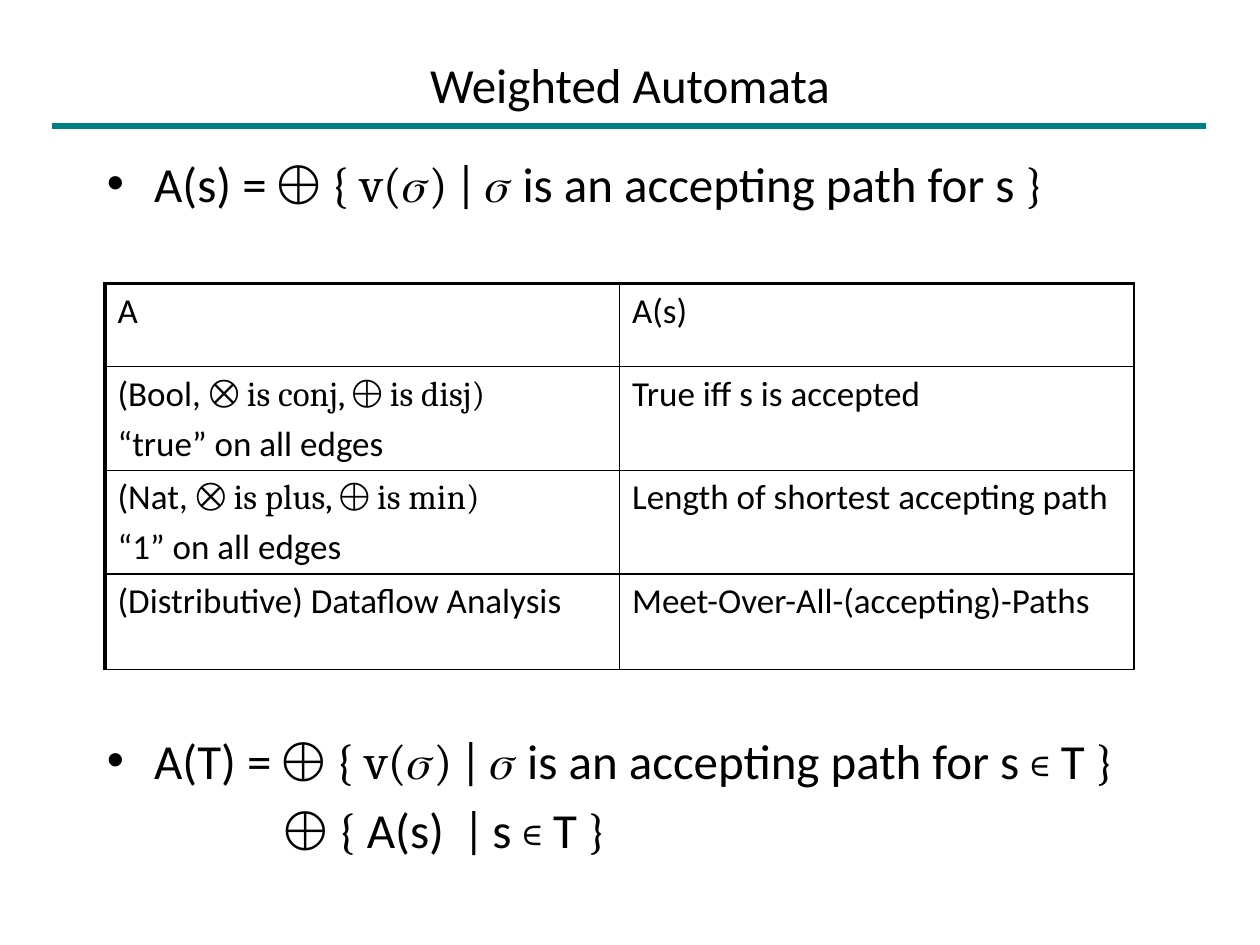
from lxml import etree
from pptx import Presentation
from pptx.dml.color import RGBColor
from pptx.enum.shapes import MSO_CONNECTOR
from pptx.enum.text import MSO_ANCHOR, PP_ALIGN
from pptx.oxml.ns import qn
from pptx.util import Pt

STRAIGHT = MSO_CONNECTOR.STRAIGHT
TOP, MIDDLE = MSO_ANCHOR.TOP, MSO_ANCHOR.MIDDLE
LEFT, CENTER = PP_ALIGN.LEFT, PP_ALIGN.CENTER
SANS, SERIF = "Calibri", "Cambria"
BLACK, TEAL = "000000", "008080"
THIN, THICK = 1, 2.25
BULLET_INDENT = 27
CONTINUATION_INDENT = 101.5


def color(hex_string):
    return RGBColor.from_string(hex_string)


class SlideBuilder:
    def __init__(self, slide):
        self.slide = slide

    def fill_text(self, text_frame, paragraphs, size, align=LEFT):
        """Fill a frame with paragraphs, each a list of (text, font) runs."""
        for index, runs in enumerate(paragraphs):
            paragraph = text_frame.paragraphs[0] if index == 0 else text_frame.add_paragraph()
            paragraph.alignment = align
            if index:
                paragraph.space_before = Pt(size * 0.2)
            for text, font_name in runs:
                run = paragraph.add_run()
                run.text = text
                run.font.name = font_name
                run.font.size = Pt(size)
                run.font.color.rgb = color(BLACK)

    def text(self, left, top, width, height, paragraphs, align=LEFT, anchor=TOP):
        shape = self.slide.shapes.add_textbox(Pt(left), Pt(top), Pt(width), Pt(height))
        text_frame = shape.text_frame
        text_frame.word_wrap = True
        text_frame.vertical_anchor = anchor
        self.fill_text(text_frame, paragraphs, 28, align)
        return text_frame

    def bullet_text(self, left, top, width, height, paragraphs):
        """Bullet the first paragraph and indent the rest below its formula."""
        text_frame = self.text(left, top, width, height, paragraphs)
        for index, paragraph in enumerate(text_frame.paragraphs):
            properties = paragraph._p.get_or_add_pPr()
            if index:
                properties.set("marL", str(Pt(CONTINUATION_INDENT)))
                properties.set("indent", "0")
            else:
                properties.set("marL", str(Pt(BULLET_INDENT)))
                properties.set("indent", str(Pt(-BULLET_INDENT)))
                etree.SubElement(properties, qn("a:buFont")).set("typeface", "Arial")
                etree.SubElement(properties, qn("a:buChar")).set("char", "•")

    def line(self, start_x, start_y, end_x, end_y, width, line_color):
        connector = self.slide.shapes.add_connector(
            STRAIGHT, Pt(start_x), Pt(start_y), Pt(end_x), Pt(end_y))
        connector.line.width = Pt(width)
        connector.line.color.rgb = color(line_color)
        etree.SubElement(connector._element.spPr, qn("a:effectLst"))

    def border(self, cell, widths):
        """Draw the cell's left, right, top and bottom edges."""
        properties = cell._tc.get_or_add_tcPr()
        for index, (side, width) in enumerate(zip("LRTB", widths)):
            edge = etree.Element(qn(f"a:ln{side}"), w=str(Pt(width)))
            fill = etree.SubElement(edge, qn("a:solidFill"))
            etree.SubElement(fill, qn("a:srgbClr")).set("val", BLACK)
            properties.insert(index, edge)

    def table(self, left, top, column_width, row_heights, rows):
        column_count = len(rows[0])
        table = self.slide.shapes.add_table(
            len(rows), column_count, Pt(left), Pt(top),
            Pt(column_width * column_count), Pt(sum(row_heights))).table
        table.first_row = False
        table.horz_banding = False
        for column in table.columns:
            column.width = Pt(column_width)
        for row_index, (height, contents) in enumerate(zip(row_heights, rows)):
            table.rows[row_index].height = Pt(height)
            for column_index, paragraphs in enumerate(contents):
                cell = table.cell(row_index, column_index)
                cell.fill.background()
                self.fill_text(cell.text_frame, paragraphs, 20)
                left_width = THIN if column_index else THICK
                top_width = THIN if row_index else THICK
                self.border(cell, (left_width, THIN, top_width, THIN))


def main():
    presentation = Presentation()
    presentation.slide_width, presentation.slide_height = Pt(720), Pt(540)
    builder = SlideBuilder(presentation.slides.add_slide(presentation.slide_layouts[6]))

    builder.line(30, 72, 689, 72, 4, TEAL)
    builder.text(54, 24, 612, 48, [[("Weighted Automata", SANS)]], CENTER, MIDDLE)

    path_values = ("⨁ { v(𝜎) | 𝜎 ", SERIF)
    closing = (" }", SERIF)
    member_of_t = [("∊ ", SERIF), ("T", SANS), closing]
    builder.bullet_text(54, 84, 612, 72, [
        [("A(s) = ", SANS), path_values, ("is an accepting path for s", SANS), closing],
    ])
    builder.table(60, 162, 294, (47.5, 52, 52, 54.5), [
        ([[("A", SANS)]], [[("A(s)", SANS)]]),
        ([[("(Bool, ", SANS), ("⨂ is conj, ⨁ is disj)", SERIF)],
          [("“true” on all edges", SANS)]],
         [[("True iff s is accepted", SANS)]]),
        ([[("(Nat, ", SANS), ("⨂ is plus, ⨁ is min)", SERIF)],
          [("“1” on all edges", SANS)]],
         [[("Length of shortest accepting path", SANS)]]),
        ([[("(Distributive) Dataflow Analysis", SANS)]],
         [[("Meet-Over-All-(accepting)-Paths", SANS)]]),
    ])
    builder.bullet_text(54, 414, 612, 102, [
        [("A(T) = ", SANS), path_values, ("is an accepting path for s ", SANS), *member_of_t],
        [("⨁ { ", SERIF), ("A(s)  ", SANS), ("| ", SERIF), ("s ", SANS), *member_of_t],
    ])
    presentation.save("out.pptx")


if __name__ == "__main__":
    main()
